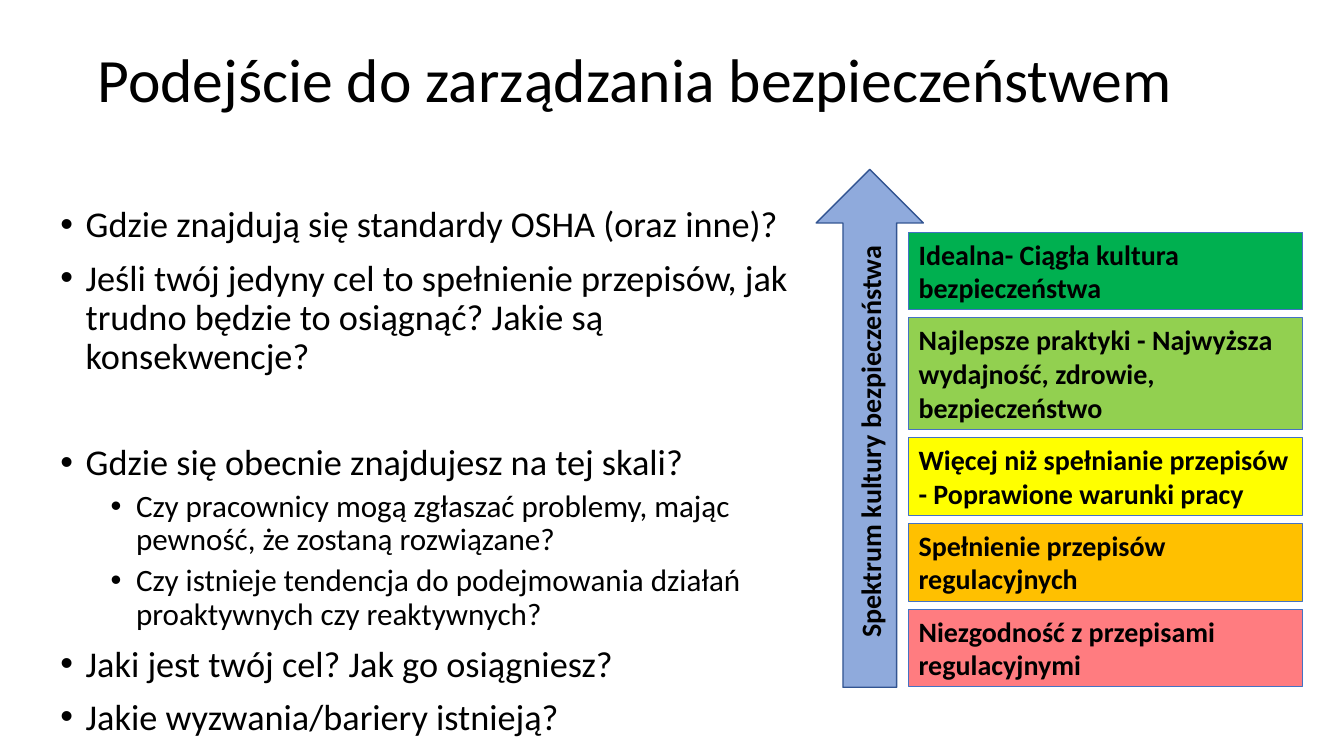
from pptx import Presentation
from pptx.dml.color import RGBColor
from pptx.enum.shapes import MSO_SHAPE
from pptx.enum.text import MSO_ANCHOR, MSO_AUTO_SIZE, PP_ALIGN
from pptx.oxml import parse_xml
from pptx.oxml.ns import nsdecls
from pptx.util import Cm, Pt

RECTANGLE = MSO_SHAPE.RECTANGLE
UP_ARROW = MSO_SHAPE.UP_ARROW
TOP = MSO_ANCHOR.TOP
MIDDLE = MSO_ANCHOR.MIDDLE
LEFT = PP_ALIGN.LEFT
CENTER = PP_ALIGN.CENTER
GROW = MSO_AUTO_SIZE.SHAPE_TO_FIT_TEXT

FONT = "Calibri"
BLACK = "000000"
BAND_GAP = 0.2
BAND_HEIGHTS = {2: 1.96, 3: 2.82}

TITLE = "Podejście do zarządzania bezpieczeństwem"
QUESTIONS = [
    (0, 10, "Gdzie znajdują się standardy OSHA (oraz inne)?"),
    (0, 10, "Jeśli twój jedyny cel to spełnienie przepisów, jak trudno "
            "będzie to osiągnąć? Jakie są konsekwencje?"),
    (0, 48, "Gdzie się obecnie znajdujesz na tej skali?"),
    (1, 5, "Czy pracownicy mogą zgłaszać problemy, mając pewność, "
           "że zostaną rozwiązane?"),
    (1, 5, "Czy istnieje tendencja do podejmowania działań "
           "proaktywnych czy reaktywnych?"),
    (0, 10, "Jaki jest twój cel? Jak go osiągniesz?"),
    (0, 10, "Jakie wyzwania/bariery istnieją?"),
]
SPECTRUM = "Spektrum kultury bezpieczeństwa"
CULTURE_LEVELS = [
    ("Idealna- Ciągła kultura bezpieczeństwa", "00B050", 2),
    ("Najlepsze praktyki - Najwyższa wydajność, zdrowie, bezpieczeństwo",
     "92D050", 3),
    ("Więcej niż spełnianie przepisów - Poprawione warunki pracy",
     "FFFF00", 2),
    ("Spełnienie przepisów regulacyjnych", "FFC000", 2),
    ("Niezgodność z przepisami regulacyjnymi", "FF7C80", 2),
]


def color(hex_value):
    """Turn a hex string into a colour."""
    return RGBColor.from_string(hex_value)


def write(paragraph, text, size, bold=False, align=LEFT, spacing=1.0,
          before=0, bullet_level=None):
    """Fill a paragraph with formatted text, bulleted if given a level."""
    paragraph.alignment = align
    paragraph.line_spacing = spacing
    paragraph.space_before = Pt(before)
    run = paragraph.add_run()
    run.text = text
    run.font.name = FONT
    run.font.size = Pt(size)
    run.font.bold = bold
    run.font.color.rgb = color(BLACK)
    if bullet_level is not None:
        paragraph.level = bullet_level
        properties = paragraph._p.get_or_add_pPr()
        properties.set("marL", str(Cm(0.64 + 1.27 * bullet_level)))
        properties.set("indent", str(-Cm(0.64)))
        for tag in ('a:buFont {} typeface="Arial"', 'a:buChar {} char="•"'):
            properties.append(parse_xml(f"<{tag.format(nsdecls('a'))}/>"))


def add_frame(slide, left, top, width, height, anchor):
    """Add a wrapping text box and return its text frame."""
    box = slide.shapes.add_textbox(Cm(left), Cm(top), Cm(width), Cm(height))
    box.text_frame.word_wrap = True
    box.text_frame.vertical_anchor = anchor
    return box.text_frame


def add_block(group, kind, left, top, width, height, fill, line, weight):
    """Add a filled, outlined shape to the group."""
    block = group.shapes.add_shape(kind, Cm(left), Cm(top), Cm(width), Cm(height))
    block.shadow.inherit = False
    block.fill.solid()
    block.fill.fore_color.rgb = color(fill)
    block.line.color.rgb = color(line)
    block.line.width = Pt(weight)
    block.text_frame.word_wrap = True
    return block


def add_title(slide, left, top, width, height):
    """Place the slide title."""
    frame = add_frame(slide, left, top, width, height, MIDDLE)
    write(frame.paragraphs[0], TITLE, 44, spacing=0.9)


def add_questions(slide, left, top, width, height):
    """Place the two-level list of questions."""
    frame = add_frame(slide, left, top, width, height, TOP)
    for index, (level, before, question) in enumerate(QUESTIONS):
        paragraph = frame.add_paragraph() if index else frame.paragraphs[0]
        write(paragraph, question, 22.2 if level else 25.9, spacing=0.9,
              before=before, bullet_level=level)


def add_culture_scale(slide, left, top, width, height):
    """Place the stacked culture levels and the upward arrow beside them."""
    group = slide.shapes.add_group_shape()
    band_left = left + 2.33
    band_top = top + 1.58
    for label, fill, lines in CULTURE_LEVELS:
        band_height = BAND_HEIGHTS[lines]
        band = add_block(group, RECTANGLE, band_left, band_top,
                         left + width - band_left, band_height,
                         fill, "4472C4", 0.75)
        band.text_frame.vertical_anchor = TOP
        band.text_frame.auto_size = GROW
        write(band.text_frame.paragraphs[0], label, 20, bold=True)
        band_top += band_height + BAND_GAP

    arrow = add_block(group, UP_ARROW, left, top, 2.7, height,
                      "8FAADC", "325491", 1)
    arrow.text_frame.vertical_anchor = MIDDLE
    arrow.element.txBody.bodyPr.set("vert", "vert270")
    write(arrow.text_frame.paragraphs[0], SPECTRUM, 20, bold=True, align=CENTER)


def main():
    """Build and save the slide."""
    presentation = Presentation()
    presentation.slide_width = Cm(33.87)
    presentation.slide_height = Cm(19.05)
    slide = presentation.slides.add_slide(presentation.slide_layouts[6])
    add_title(slide, 2.21, 0.25, 29.21, 3.68)
    add_questions(slide, 1.27, 5.08, 19.3, 13.74)
    add_culture_scale(slide, 20.57, 4.27, 12.25, 13.05)
    presentation.save("out.pptx")


if __name__ == "__main__":
    main()
